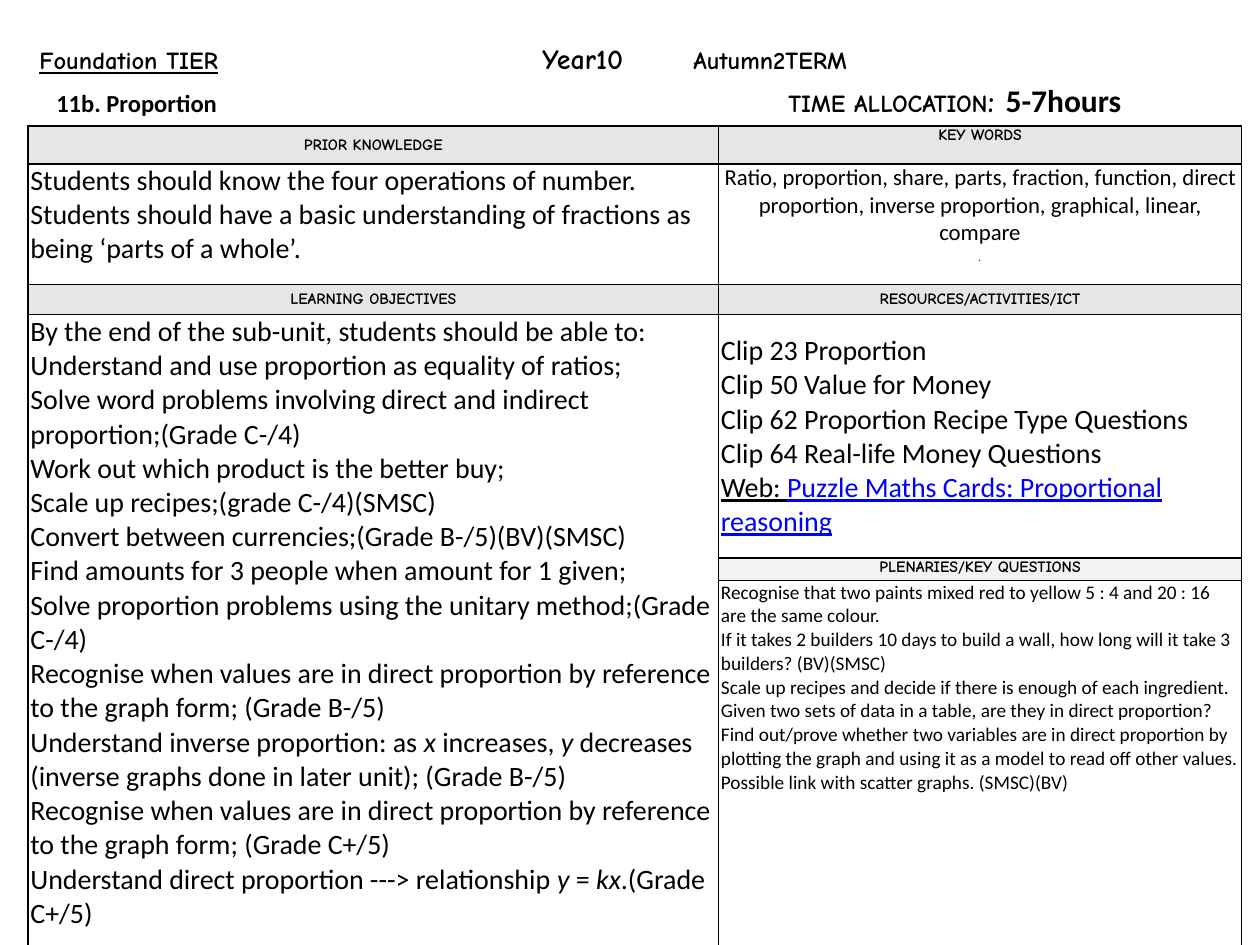
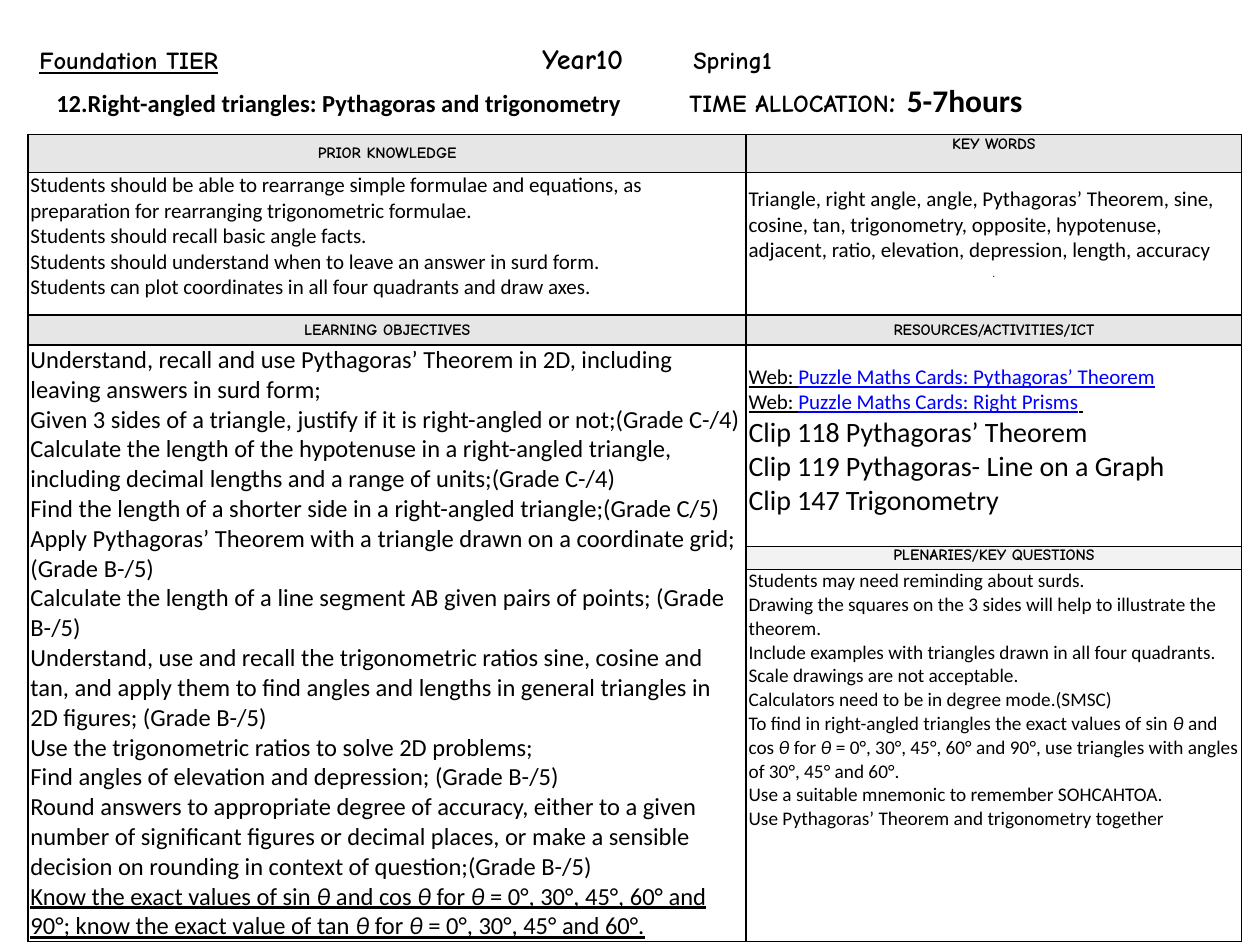
from dataclasses import dataclass

from lxml import etree
from pptx import Presentation
from pptx.dml.color import RGBColor
from pptx.enum import text
from pptx.oxml import ns
from pptx.util import Pt


@dataclass(frozen=True)
class Theme:
    ink: RGBColor = RGBColor(0x00, 0x00, 0x00)
    link: RGBColor = RGBColor(0x00, 0x00, 0xFF)
    band: RGBColor = RGBColor(0xE6, 0xE6, 0xE6)
    pale_band: RGBColor = RGBColor(0xF2, 0xF2, 0xF2)
    hand: str = "Comic Neue"
    plain: str = "Calibri"
    heading: int = 9
    notes: int = 11
    title: int = 14
    year: int = 16
    hours: int = 18
    border: int = 1


THEME = Theme()
TOP, MIDDLE = text.MSO_ANCHOR.TOP, text.MSO_ANCHOR.MIDDLE
LEFT, CENTER = text.PP_ALIGN.LEFT, text.PP_ALIGN.CENTER
TITLE_BOX = (16, 18, 704, 90)
HEADING_ROW, PLENARY_ROW, PRIOR_ROW = 17.25, 13, 21.6
LINE_GAP = 11  # height of one small heading line

# Marks inside wording: *italic*, _underlined_, ^link colour^.
# Each body cell is a list of (size, lines) groups.
UNITS = [
    dict(
        term="Autumn2TERM", topic="11b. Proportion", time_stop=428,
        table_box=(16, 72, 693.4, 472.3), left_column=394.6,
        knowledge_row=68.6, resource_row=139, words_align=CENTER,
        knowledge=[(16, [
            "Students should know the four operations of number.",
            "Students should have a basic understanding of fractions as being ‘parts of a whole’.",
        ])],
        key_words=[(13, [
            "Ratio, proportion, share, parts, fraction, function, direct proportion, "
            "inverse proportion, graphical, linear, compare",
        ])],
        objectives=[(16, [
            "By the end of the sub-unit, students should be able to:",
            "Understand and use proportion as equality of ratios;",
            "Solve word problems involving direct and indirect proportion;(Grade C-/4)",
            "Work out which product is the better buy;",
            "Scale up recipes;(grade C-/4)(SMSC)",
            "Convert between currencies;(Grade B-/5)(BV)(SMSC)",
            "Find amounts for 3 people when amount for 1 given;",
            "Solve proportion problems using the unitary method;(Grade C-/4)",
            "Recognise when values are in direct proportion by reference to the graph form; (Grade B-/5)",
            "Understand inverse proportion: as *x* increases, *y* decreases "
            "(inverse graphs done in later unit); (Grade B-/5)",
            "Recognise when values are in direct proportion by reference to the graph form; (Grade C+/5)",
            "Understand direct proportion ---> relationship *y* = *kx*.(Grade C+/5)",
        ])],
        resources=[(16, [
            "Clip 23 Proportion",
            "Clip 50 Value for Money",
            "Clip 62 Proportion Recipe Type Questions",
            "Clip 64 Real-life Money Questions",
            "_Web: ^Puzzle Maths Cards: Proportional reasoning^_",
        ])],
        plenaries=[(THEME.notes, [
            "Recognise that two paints mixed red to yellow 5 : 4 and 20 : 16 are the same colour.",
            "If it takes 2 builders 10 days to build a wall, how long will it take 3 builders? (BV)(SMSC)",
            "Scale up recipes and decide if there is enough of each ingredient.",
            "Given two sets of data in a table, are they in direct proportion?",
            "Find out/prove whether two variables are in direct proportion by plotting the graph "
            "and using it as a model to read off other values.",
            "Possible link with scatter graphs. (SMSC)(BV)",
        ])],
    ),
    dict(
        term="Spring1", topic="12.Right-angled triangles: Pythagoras and trigonometry",
        time_stop=371.5,
        table_box=(16, 77, 693.4, 460.2), left_column=410.4,
        knowledge_row=81.4, resource_row=115.2, words_align=LEFT,
        knowledge=[(12, [
            "Students should be able to rearrange simple formulae and equations, "
            "as preparation for rearranging trigonometric formulae.",
            "Students should recall basic angle facts.",
            "Students should understand when to leave an answer in surd form.",
            "Students can plot coordinates in all four quadrants and draw axes.",
        ])],
        key_words=[(12, [
            "Triangle, right angle, angle, Pythagoras’ Theorem, sine, cosine, tan, trigonometry, "
            "opposite, hypotenuse, adjacent, ratio, elevation, depression, length, accuracy",
        ])],
        objectives=[(14, [
            "Understand, recall and use Pythagoras’ Theorem in 2D, including leaving answers in surd form;",
            "Given 3 sides of a triangle, justify if it is right-angled or not;(Grade C-/4)",
            "Calculate the length of the hypotenuse in a right-angled triangle, "
            "including decimal lengths and a range of units;(Grade C-/4)",
            "Find the length of a shorter side in a right-angled triangle;(Grade C/5)",
            "Apply Pythagoras’ Theorem with a triangle drawn on a coordinate grid;(Grade B-/5)",
            "Calculate the length of a line segment AB given pairs of points; (Grade B-/5)",
            "Understand, use and recall the trigonometric ratios sine, cosine and tan, and apply them "
            "to find angles and lengths in general triangles in 2D figures; (Grade B-/5)",
            "Use the trigonometric ratios to solve 2D problems;",
            "Find angles of elevation and depression; (Grade B-/5)",
            "Round answers to appropriate degree of accuracy, either to a given number of significant "
            "figures or decimal places, or make a sensible decision on rounding in context of "
            "question;(Grade B-/5)",
            "_Know the exact values of sin *θ* and cos *θ* for *θ* = 0°, 30°, 45°, 60° and 90°; "
            "know the exact value of tan *θ* for *θ* = 0°, 30°, 45° and 60°._",
        ])],
        resources=[
            (12, [
                "_Web: ^Puzzle Maths Cards: Pythagoras’ Theorem^_",
                "_Web: ^Puzzle Maths Cards: Right Prisms^ _",
            ]),
            (16, [
                "Clip 118 Pythagoras’ Theorem",
                "Clip 119 Pythagoras- Line on a Graph",
                "Clip 147 Trigonometry",
            ]),
        ],
        plenaries=[(THEME.notes, [
            "Students may need reminding about surds.",
            "Drawing the squares on the 3 sides will help to illustrate the theorem.",
            "Include examples with triangles drawn in all four quadrants.",
            "Scale drawings are not acceptable.",
            "Calculators need to be in degree mode.(SMSC)",
            "To find in right-angled triangles the exact values of sin *θ* and cos *θ* for *θ* = "
            "0°, 30°, 45°, 60° and 90°, use triangles with angles of 30°, 45° and 60°.",
            "Use a suitable mnemonic to remember SOHCAHTOA.",
            "Use Pythagoras’ Theorem and trigonometry together",
        ])],
    ),
]


def add_run(paragraph, wording, size, face, color=THEME.ink, **style):
    run = paragraph.add_run()
    run.text = wording
    run.font.color.rgb = color
    for key, value in dict(size=Pt(size), name=face, **style).items():
        setattr(run.font, key, value)


def add_marked_runs(paragraph, line, size):
    """Split a line at its marks; every second piece carries the style."""
    for under, underlined in enumerate(line.split("_")):
        for linked, tinted in enumerate(underlined.split("^")):
            for slanted, piece in enumerate(tinted.split("*")):
                if piece:
                    add_run(paragraph, piece, size, THEME.plain,
                            THEME.link if linked % 2 else THEME.ink, bold=False,
                            underline=bool(under % 2), italic=bool(slanted % 2))


def next_paragraph(frame, align=LEFT):
    first = frame.paragraphs[0]
    paragraph = frame.add_paragraph() if first.runs else first
    paragraph.alignment = align
    return paragraph


def set_tab_stops(paragraph, stops):
    tabs = etree.SubElement(paragraph._p.get_or_add_pPr(), ns.qn("a:tabLst"))
    for stop in stops:
        etree.SubElement(tabs, ns.qn("a:tab"), pos=str(int(Pt(stop))), algn="l")


def border_cell(cell):
    properties = cell._tc.get_or_add_tcPr()
    for side in "LRTB":
        edge = etree.SubElement(properties, ns.qn(f"a:ln{side}"), w=str(int(Pt(THEME.border))))
        fill = etree.SubElement(edge, ns.qn("a:solidFill"))
        etree.SubElement(fill, ns.qn("a:srgbClr"), val=str(THEME.ink))


def fill_heading(cell, wording, band=THEME.band, anchor=MIDDLE):
    cell.fill.solid()
    cell.fill.fore_color.rgb = band
    cell.vertical_anchor = anchor
    add_run(next_paragraph(cell.text_frame, CENTER), wording, THEME.heading, THEME.hand, bold=True)


def fill_body(cell, groups, align=LEFT):
    for size, lines in groups:
        for line in lines:
            add_marked_runs(next_paragraph(cell.text_frame, align), line, size)


def add_unit_title(slide, box, unit):
    title = slide.shapes.title
    title.left, title.top, title.width, title.height = map(Pt, box)
    frame = title.text_frame
    layout = dict(auto_size=text.MSO_AUTO_SIZE.NONE, word_wrap=True, vertical_anchor=TOP,
                  margin_left=Pt(6.5), margin_right=Pt(6.5),
                  margin_top=Pt(3), margin_bottom=Pt(3))
    for key, value in layout.items():
        setattr(frame, key, value)

    hand, plain, size = THEME.hand, THEME.plain, THEME.title
    rows = [
        ((287.5, 373.7), [("Foundation TIER", size, hand, True),
                          ("\tYear10", THEME.year, hand, False),
                          (f"\t{unit['term']}", size, hand, False)]),
        ((9.7, unit["time_stop"]), [(f"\t{unit['topic']}\t", size, plain, False),
                                    ("TIME ALLOCATION", size, hand, False),
                                    (": ", THEME.hours, hand, False),
                                    ("5-7hours", THEME.hours, plain, False)]),
    ]
    for stops, runs in rows:
        paragraph = next_paragraph(frame)
        paragraph.line_spacing = 1.15
        paragraph.space_before = paragraph.space_after = Pt(0)
        set_tab_stops(paragraph, stops)
        for wording, points, face, underline in runs:
            add_run(paragraph, wording, points, face, bold=True, underline=underline)


def add_unit_table(slide, box, unit):
    left, top, width, height = box
    heights = [PRIOR_ROW, unit["knowledge_row"], HEADING_ROW, unit["resource_row"], PLENARY_ROW]
    heights.append(height - sum(heights))
    widths = [unit["left_column"], width - unit["left_column"]]
    table = slide.shapes.add_table(len(heights), len(widths), *map(Pt, box)).table
    table.first_row = table.horz_banding = False
    for row, points in zip(table.rows, heights):
        row.height = Pt(points)
    for column, points in zip(table.columns, widths):
        column.width = Pt(points)
    for cell in table.iter_cells():
        cell.margin_left = cell.margin_right = Pt(1.4)
        cell.margin_top = cell.margin_bottom = Pt(0)
        border_cell(cell)
        cell.fill.background()
    table.cell(3, 0).merge(table.cell(5, 0))

    fill_heading(table.cell(0, 0), "PRIOR KNOWLEDGE")
    fill_heading(table.cell(0, 1), "KEY WORDS", anchor=TOP)
    fill_heading(table.cell(2, 0), "LEARNING OBJECTIVES")
    fill_heading(table.cell(2, 1), "RESOURCES/ACTIVITIES/ICT")
    fill_heading(table.cell(4, 1), "PLENARIES/KEY QUESTIONS", THEME.pale_band, TOP)

    fill_body(table.cell(1, 0), unit["knowledge"])
    fill_body(table.cell(3, 0), unit["objectives"])
    fill_body(table.cell(5, 1), unit["plenaries"])

    resources = table.cell(3, 1)
    resources.margin_top = Pt(LINE_GAP)
    fill_body(resources, unit["resources"])

    key_words = table.cell(1, 1)
    key_words.vertical_anchor = MIDDLE
    key_words.margin_bottom = Pt(LINE_GAP)
    fill_body(key_words, unit["key_words"], unit["words_align"])
    add_run(next_paragraph(key_words.text_frame, CENTER), ".", THEME.heading, THEME.hand, bold=False)


def main():
    deck = Presentation()
    deck.slide_width, deck.slide_height = Pt(720), Pt(540)
    title_only = deck.slide_layouts[5]
    for unit in UNITS:
        slide = deck.slides.add_slide(title_only)
        add_unit_title(slide, TITLE_BOX, unit)
        add_unit_table(slide, unit["table_box"], unit)
    deck.save("out.pptx")


if __name__ == "__main__":
    main()
